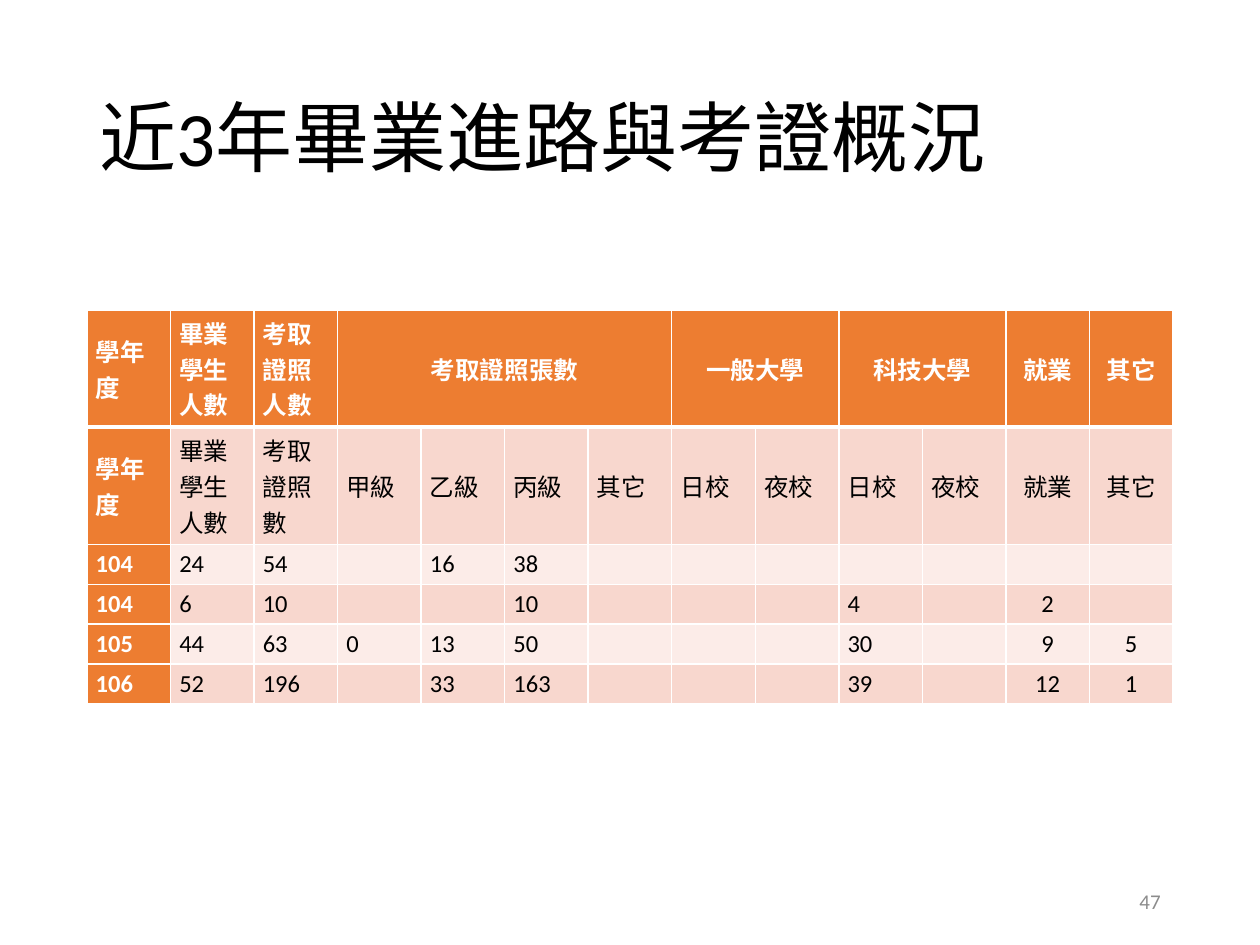
import lxml.etree
import pptx
import pptx.dml.color
import pptx.enum.text
import pptx.oxml.ns
import pptx.util

Inches = pptx.util.Inches
Pt = pptx.util.Pt
PP_ALIGN = pptx.enum.text.PP_ALIGN
MSO_ANCHOR = pptx.enum.text.MSO_ANCHOR
qn = pptx.oxml.ns.qn

FONT = "Calibri"
COLORS = {
    "text": "000000",
    "white": "FFFFFF",
    "header": "ED7D31",
    "band_dark": "F8D7CE",
    "band_light": "FCECE8",
    "page_number": "8C8C8C",
}
HEADER_SPANS = {3: 4, 7: 2, 9: 2}
ROWS = [
    ["學年度", "畢業學生人數", "考取證照人數", "考取證照張數", "", "", "",
     "一般大學", "", "科技大學", "", "就業", "其它"],
    ["學年度", "畢業學生人數", "考取證照數", "甲級", "乙級", "丙級", "其它",
     "日校", "夜校", "日校", "夜校", "就業", "其它"],
    ["104", "24", "54", "", "16", "38", "", "", "", "", "", "", ""],
    ["104", "6", "10", "", "", "10", "", "", "", "4", "", "2", ""],
    ["105", "44", "63", "0", "13", "50", "", "", "", "30", "", "9", "5"],
    ["106", "52", "196", "", "33", "163", "", "", "", "39", "", "12", "1"],
]
ROW_HEIGHTS = [0.79, 0.79, 0.31, 0.31, 0.31, 0.31]


def rgb(name):
    return pptx.dml.color.RGBColor.from_string(COLORS[name])


def add_run(paragraph, text, size, color, bold=False):
    run = paragraph.add_run()
    run.text = text
    run.font.name = FONT
    run.font.size = Pt(size)
    run.font.bold = bold
    run.font.color.rgb = rgb(color)


def set_borders(cell, widths):
    properties = cell._tc.get_or_add_tcPr()
    for side, width in widths.items():
        line = lxml.etree.SubElement(properties, qn(f"a:ln{side}"), w=str(Pt(width)))
        fill = lxml.etree.SubElement(line, qn("a:solidFill"))
        lxml.etree.SubElement(fill, qn("a:srgbClr"), val=COLORS["white"])


def fill_cell(cell, text, row, column):
    header = row == 0 or column == 0
    band = "band_dark" if row % 2 else "band_light"
    set_borders(cell, {"L": 1, "R": 1, "T": 3 if row == 1 else 1, "B": 3 if row == 0 else 1})
    cell.fill.solid()
    cell.fill.fore_color.rgb = rgb("header" if header else band)
    cell.margin_left = cell.margin_right = Inches(0.07)
    cell.margin_top = cell.margin_bottom = Inches(0.04)
    cell.vertical_anchor = MSO_ANCHOR.TOP if column in (1, 2) else MSO_ANCHOR.MIDDLE
    paragraph = cell.text_frame.paragraphs[0]
    if column >= 11 or (row == 0 and column >= 3):
        paragraph.alignment = PP_ALIGN.CENTER
    if text:
        add_run(paragraph, text, 14, "white" if header else "text", header)
    else:
        lxml.etree.SubElement(paragraph._p, qn("a:endParaRPr"), sz="1400")


def place_title(slide, box):
    title = slide.shapes.title
    title.left, title.top, title.width, title.height = box
    title.text_frame.vertical_anchor = MSO_ANCHOR.MIDDLE
    paragraph = title.text_frame.paragraphs[0]
    paragraph.alignment = PP_ALIGN.LEFT
    paragraph.line_spacing = 0.9
    add_run(paragraph, "近3年畢業進路與考證概況", 44, "text")


def place_graduate_table(slide, box):
    table = slide.shapes.add_table(len(ROWS), len(ROWS[0]), *box).table
    for column in table.columns:
        column.width = int(box[2] / len(ROWS[0]))
    for row, height in zip(table.rows, ROW_HEIGHTS):
        row.height = Inches(height)
    for row, texts in enumerate(ROWS):
        for column, text in enumerate(texts):
            fill_cell(table.cell(row, column), text, row, column)
    for start, span in HEADER_SPANS.items():
        table.cell(0, start).merge(table.cell(0, start + span - 1))


def place_page_number(slide, box):
    frame = slide.shapes.add_textbox(*box).text_frame
    frame.word_wrap = True
    frame.vertical_anchor = MSO_ANCHOR.MIDDLE
    paragraph = frame.paragraphs[0]
    paragraph.alignment = PP_ALIGN.RIGHT
    add_run(paragraph, "47", 12, "page_number")


def main():
    deck = pptx.Presentation()
    deck.slide_width, deck.slide_height = Inches(10), Inches(7.5)
    slide = deck.slides.add_slide(deck.slide_layouts[5])
    place_title(slide, (Inches(0.69), Inches(0.4), Inches(8.62), Inches(1.45)))
    place_graduate_table(slide, (Inches(0.69), Inches(2.46), Inches(8.62), Inches(2.83)))
    place_page_number(slide, (Inches(7.06), Inches(6.95), Inches(2.25), Inches(0.4)))
    deck.save("out.pptx")


if __name__ == "__main__":
    main()
